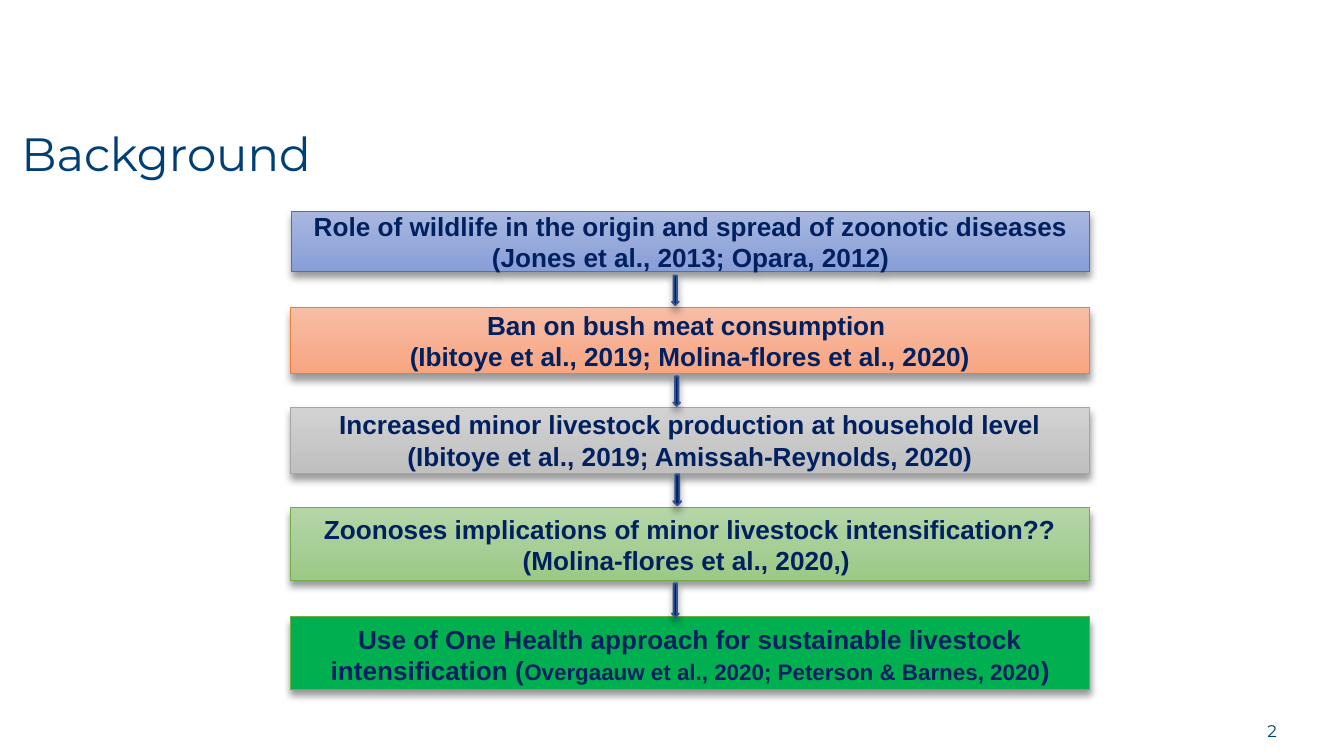
"""Build the Background slide: five linked steps from wildlife to One Health."""
from lxml import etree
from pptx import Presentation
from pptx import util as u
from pptx.dml import color
from pptx.enum import shapes, text
from pptx.oxml import ns

COLORS = {"navy": "002060", "heading": "003F75", "arrow_edge": "325491", "shadow": "000000"}


def style_font(font, name, size, hex_color, bold=False):
    font.name, font.size, font.bold = name, u.Pt(size), bold
    font.color.rgb = color.RGBColor.from_string(hex_color)


def add_outlined(preset, bounds, edge, width):
    shape = slide.shapes.add_shape(preset, *map(u.Inches, bounds))
    shape.line.color.rgb = color.RGBColor.from_string(edge)
    shape.line.width = u.Pt(width)
    shape.shadow.inherit = False
    effects = shape._element.spPr.find(ns.qn("a:effectLst"))
    drop = etree.SubElement(effects, ns.qn("a:outerShdw"), blurRad=str(u.Pt(4)),
                            dist=str(u.Pt(3)), dir="5400000", algn="ctr", rotWithShape="0")
    tint = etree.SubElement(drop, ns.qn("a:srgbClr"), val=COLORS["shadow"])
    etree.SubElement(tint, ns.qn("a:alpha"), val="40000")
    return shape


deck = Presentation()
deck.slide_width = u.Inches(10)
deck.slide_height = u.Inches(10 * 9 / 16)
slide = deck.slides.add_slide(deck.slide_layouts[5])

heading = slide.shapes.title
heading.left, heading.top, heading.width, heading.height = map(u.Inches, (0.06, 0.88, 2.74, 0.47))
heading.text_frame.text = "Background"
heading.text_frame.auto_size = text.MSO_AUTO_SIZE.NONE
heading.text_frame.vertical_anchor = text.MSO_ANCHOR.TOP
heading.text_frame.paragraphs[0].alignment = text.PP_ALIGN.LEFT
style_font(heading.text_frame.paragraphs[0].runs[0].font, "Montserrat", 25, COLORS["heading"])

page_number = slide.shapes.add_textbox(*map(u.Inches, (8.99, 5.36, 0.51, 0.15)))
page_frame = page_number.text_frame
page_frame.margin_left = page_frame.margin_right = 0
page_frame.margin_top = page_frame.margin_bottom = 0
page_frame.word_wrap = True
page_frame.text = "2"
page_frame.paragraphs[0].alignment = text.PP_ALIGN.RIGHT
style_font(page_frame.paragraphs[0].runs[0].font, "Montserrat", 9, COLORS["heading"])

steps = [
    ((2.17, 1.57, 5.94, 0.45), "4472C4", ("A8B7DF", "889ED7"),
     [["Role of wildlife in the origin and spread of zoonotic diseases"],
      ["(Jones et al., 2013; Opara, 2012)"]]),
    ((2.16, 2.29, 5.95, 0.49), "ED7D31", ("F7BDA5", "F8A582"),
     [["Ban on bush meat consumption "],
      ["(Ibitoye et al., 2019; Molina-flores et al., 2020)"]]),
    ((2.16, 3.03, 5.95, 0.49), "A5A5A5", ("D2D2D2", "C0C0C0"),
     [["Increased minor livestock production at household level "
       "(Ibitoye et al., 2019; Amissah-Reynolds, 2020)"]]),
    ((2.16, 3.78, 5.95, 0.54), "70AD47", ("B5D5A7", "9CC987"),
     [["Zoonoses implications of minor livestock intensification??"],
      ["(Molina-flores et al., 2020,) "]]),
    ((2.16, 4.59, 5.95, 0.54), "70AD47", ("00B050",),
     [["Use of One Health approach for sustainable livestock intensification (",
       "Overgaauw et al., 2020; Peterson & Barnes, 2020", ")"]]),
]
for bounds, edge, fills, lines in steps:
    step = add_outlined(shapes.MSO_SHAPE.RECTANGLE, bounds, edge, 0.5)
    if len(fills) == 2:
        step.fill.gradient()
        step.fill.gradient_angle = 270
        for stop, position, shade in zip(step.fill.gradient_stops, (0, 1), fills):
            stop.position = position
            stop.color.rgb = color.RGBColor.from_string(shade)
    else:
        step.fill.solid()
        step.fill.fore_color.rgb = color.RGBColor.from_string(fills[0])
    frame = step.text_frame
    frame.word_wrap = True
    frame.vertical_anchor = text.MSO_ANCHOR.MIDDLE if len(fills) == 2 else text.MSO_ANCHOR.TOP
    for index, pieces in enumerate(lines):
        paragraph = frame.add_paragraph() if index else frame.paragraphs[0]
        paragraph.alignment = text.PP_ALIGN.CENTER
        for order, piece in enumerate(pieces):
            run = paragraph.add_run()
            run.text = piece
            style_font(run.font, "Arial", 12 if order == 1 else 14, COLORS["navy"], True)

for bounds in [(5, 2.05, 0.05, 0.22), (5.01, 2.8, 0.05, 0.22),
               (5.01, 3.53, 0.06, 0.23), (5, 4.34, 0.05, 0.25)]:
    arrow = add_outlined(shapes.MSO_SHAPE.DOWN_ARROW, bounds, COLORS["arrow_edge"], 1)
    arrow.fill.solid()
    arrow.fill.fore_color.rgb = color.RGBColor.from_string(COLORS["navy"])

deck.save("out.pptx")
